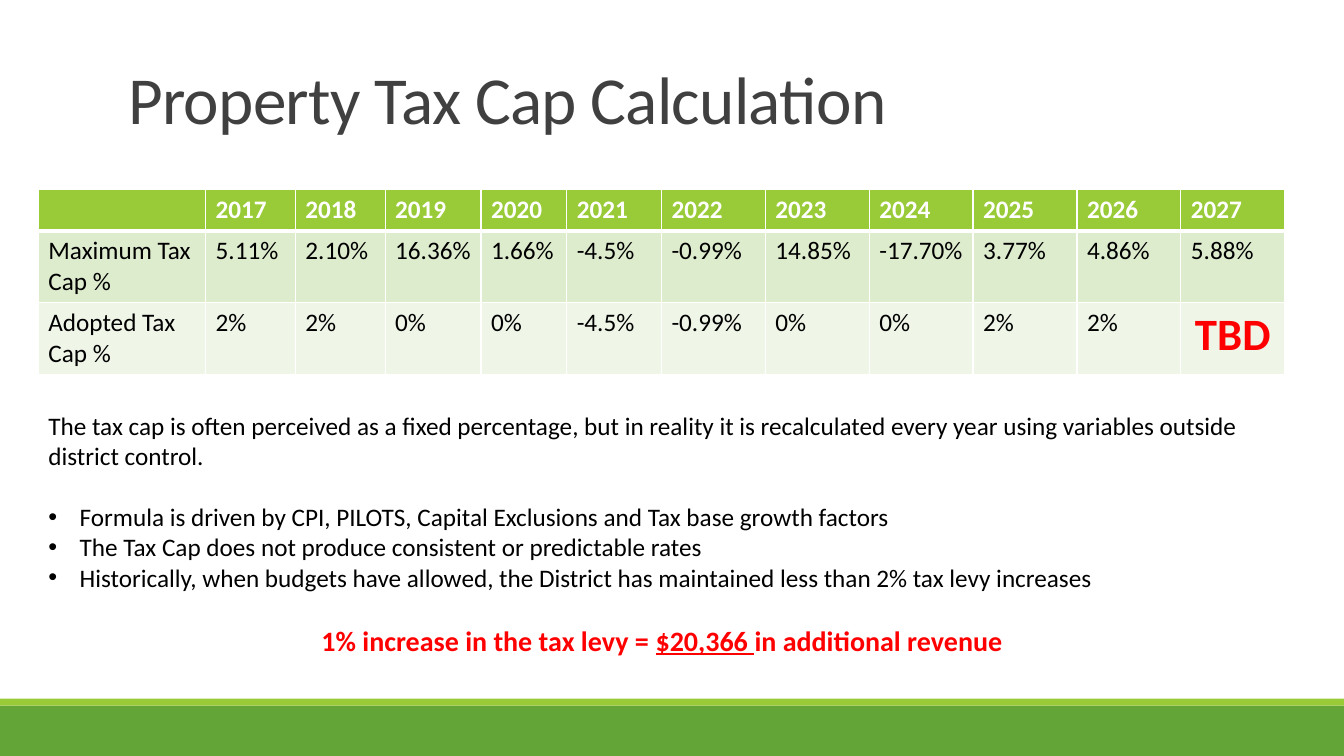
from dataclasses import dataclass

from lxml.etree import SubElement as Sub
from pptx import Presentation
from pptx.dml.color import RGBColor as Rgb
from pptx.enum.shapes import MSO_SHAPE as Form
from pptx.enum.text import MSO_ANCHOR as Anchor, MSO_AUTO_SIZE as Fit, PP_ALIGN as Align
from pptx.oxml.ns import qn
from pptx.util import Inches, Pt

WIDE, HIGH = Inches(13.33), Inches(7.5)


@dataclass(frozen=True)
class Theme:
    font: str = "Calibri"
    white: str = "FFFFFF"
    ink: str = "000000"
    gray: str = "404040"
    red: str = "FF0000"
    lime: str = "99CB38"
    green: str = "63A537"
    pale: str = "DEECCE"
    faint: str = "EFF6E8"
    head: int = 48
    text: int = 18
    call: int = 20
    big: int = 32
    gap: int = 22


@dataclass(frozen=True)
class Box:
    """Left, top, width and height in percent of the slide."""
    left: float
    top: float
    wide: float
    high: float

    def emu(self) -> tuple[int, int, int, int]:
        return across(self.left), down(self.top), across(self.wide), down(self.high)


@dataclass(frozen=True)
class Band:
    box: Box
    color: str


@dataclass(frozen=True)
class Row:
    cells: list[str]
    fill: str
    color: str
    high: float
    bold: bool = False


@dataclass(frozen=True)
class Line:
    texts: list[str]
    bullet: bool = False
    before: int = 0
    call: bool = False


LOOK = Theme()
TITLE = Box(8.78, 8, 82.5, 11.6)
GRID = Box(2.85, 25.07, 92.8, 24.27)
BODY = Box(2.85, 53.6, 92.8, 42.13)
BANDS = [
    Band(Box(0, 93.33, 100, 6.67), LOOK.green),
    Band(Box(0, 92.4, 100, 0.93), LOOK.lime),
]
COLS = [12.45, 6.68, 6.68, 7.13, 6.38, 7.05] + [7.73] * 6
ROWS = [
    Row([""] + [str(year) for year in range(2017, 2028)],
        LOOK.lime, LOOK.white, 5.47, True),
    Row(["Maximum Tax Cap %", "5.11%", "2.10%", "16.36%", "1.66%", "-4.5%", "-0.99%",
         "14.85%", "-17.70%", "3.77%", "4.86%", "5.88%"], LOOK.pale, LOOK.ink, 9.4),
    Row(["Adopted Tax Cap %", "2%", "2%", "0%", "0%", "-4.5%", "-0.99%",
         "0%", "0%", "2%", "2%", "TBD"], LOOK.faint, LOOK.ink, 9.4),
]
LINES = [
    Line(["The tax cap is often perceived as a fixed percentage, but in reality it is "
          "recalculated every year using variables outside district control."]),
    Line(["Formula is driven by CPI, PILOTS, Capital Exclusions and Tax base growth factors"],
         True, LOOK.gap),
    Line(["The Tax Cap does not produce consistent or predictable rates"], True),
    Line(["Historically, when budgets have allowed, the District has maintained less than "
          "2% tax levy increases"], True),
    Line(["1% increase in the tax levy = ", "$20,366 ", "in additional revenue"],
         before=LOOK.gap, call=True),
]


def across(share: float) -> int:
    return round(WIDE * share / 100)


def down(share: float) -> int:
    return round(HIGH * share / 100)


def style(font, size: int, color: str, bold: bool = False) -> None:
    font.name, font.size, font.bold = LOOK.font, Pt(size), bold
    font.color.rgb = Rgb.from_string(color)


def place(item, box: Box) -> None:
    item.left, item.top, item.width, item.height = box.emu()


def draw_band(slide, band: Band) -> None:
    bar = slide.shapes.add_shape(Form.RECTANGLE, *band.box.emu())
    bar.shadow.inherit = False
    bar.fill.solid()
    bar.fill.fore_color.rgb = Rgb.from_string(band.color)
    bar.line.fill.background()


def draw_title(slide) -> None:
    title = slide.shapes.title
    place(title, TITLE)
    frame = title.text_frame
    frame.text = "Property Tax Cap Calculation"
    frame.auto_size, frame.vertical_anchor = Fit.NONE, Anchor.MIDDLE
    para = frame.paragraphs[0]
    para.alignment, para.line_spacing = Align.LEFT, 0.85
    run = para.runs[0]
    style(run.font, LOOK.head, LOOK.gray)
    run._r.get_or_add_rPr().set("spc", "-50")


def edge(cell, top: int, base: int) -> None:
    props = cell._tc.get_or_add_tcPr()
    for side, size in (("L", 1), ("R", 1), ("T", top), ("B", base)):
        line = Sub(props, qn(f"a:ln{side}"), w=str(Pt(size)))
        Sub(Sub(line, qn("a:solidFill")), qn("a:srgbClr"), val=LOOK.white)


def draw_table(slide) -> None:
    table = slide.shapes.add_table(len(ROWS), len(COLS), *GRID.emu()).table
    for col, share in zip(table.columns, COLS):
        col.width = across(share)
    for r, row in enumerate(ROWS):
        table.rows[r].height = down(row.high)
        for c, text in enumerate(row.cells):
            cell = table.cell(r, c)
            edge(cell, 3 if r == 1 else 1, 3 if r == 0 else 1)
            cell.fill.solid()
            cell.fill.fore_color.rgb = Rgb.from_string(row.fill)
            cell.text_frame.text = text
            para = cell.text_frame.paragraphs[0]
            if text == "TBD":
                para.alignment = Align.CENTER
                style(para.runs[0].font, LOOK.big, LOOK.red, True)
            else:
                font = para.runs[0].font if para.runs else para.font
                style(font, LOOK.text, row.color, row.bold)


def mark(para, bullet: bool) -> None:
    props = para._p.get_or_add_pPr()
    dent = Inches(0.31) if bullet else 0
    props.set("marL", str(dent))
    props.set("indent", str(-dent))
    if bullet:
        Sub(props, qn("a:buFont"), typeface="Arial")
        Sub(props, qn("a:buChar"), char="•")
    else:
        Sub(props, qn("a:buNone"))


def draw_body(slide) -> None:
    body = slide.placeholders[1]
    place(body, BODY)
    frame = body.text_frame
    frame.auto_size, frame.word_wrap, frame.vertical_anchor = Fit.NONE, True, Anchor.TOP
    for i, line in enumerate(LINES):
        para = frame.add_paragraph() if i else frame.paragraphs[0]
        mark(para, line.bullet)
        para.space_before = Pt(line.before)
        para.alignment = Align.CENTER if line.call else Align.LEFT
        for n, text in enumerate(line.texts):
            run = para.add_run()
            run.text = text
            size, color = (LOOK.call, LOOK.red) if line.call else (LOOK.text, LOOK.ink)
            style(run.font, size, color, line.call)
            run.font.underline = n == 1


def main() -> None:
    deck = Presentation()
    deck.slide_width, deck.slide_height = WIDE, HIGH
    slide = deck.slides.add_slide(deck.slide_layouts[1])
    # Green bands at the foot
    for band in BANDS:
        draw_band(slide, band)
    # Title, yearly rates and remarks
    draw_title(slide)
    draw_table(slide)
    draw_body(slide)
    deck.save("out.pptx")


if __name__ == "__main__":
    main()
